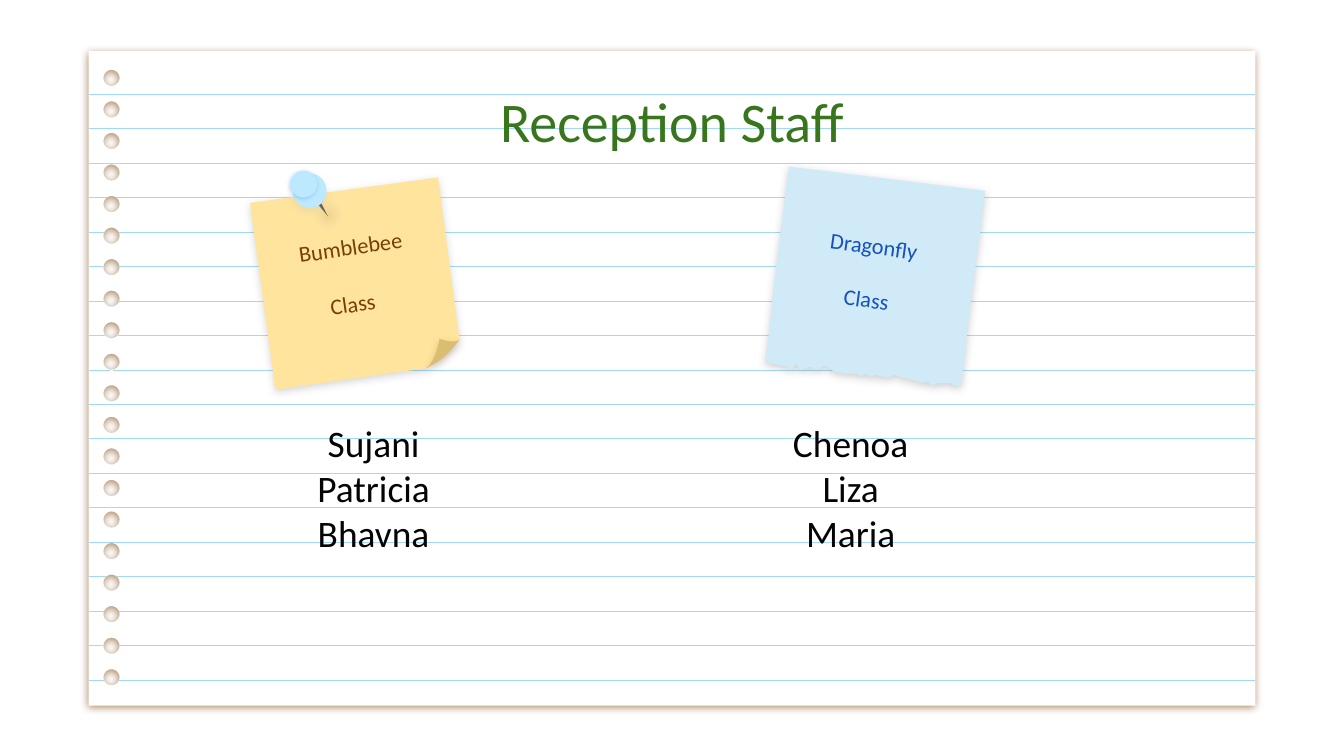
from dataclasses import dataclass
from math import cos, sin, tau

from lxml.etree import SubElement
from pptx import Presentation
from pptx.dml.color import RGBColor
from pptx.enum.shapes import MSO_CONNECTOR, MSO_SHAPE
from pptx.enum.text import MSO_ANCHOR, MSO_AUTO_SIZE, PP_ALIGN
from pptx.oxml import parse_xml
from pptx.oxml.ns import nsdecls, qn
from pptx.util import Inches, Pt

COLORS = {
    "paper": "FFFFFF", "rule": "A1DAF8", "brown": "783F04", "gray": "666666",
    "yellow": "FFE49E", "curl": "DABD71", "sky": "D1EAF7", "pin": "BDE9FF",
    "green": "38761D", "ink": "040404", "blue": "1552BD",
    "pin shade": "1155CC", "head shade": "3C78D8",
}

Point = tuple[float, float]


@dataclass
class Shadow:
    color: str
    opacity: int
    blur: float = 4.5
    distance: float = 1.5
    angle: int = 90


@dataclass
class Label:
    lines: list[str]
    frame: tuple[float, float, float, float]
    size: int
    color: str
    anchor: MSO_ANCHOR
    rotation: float = 0
    gap: float = 0
    tail_size: int = 0  # size of a closing space that makes the last line taller


LABELS = [
    Label(["Reception Staff"], (0.98, 0.54, 8.04, 0.69), 30, "green", MSO_ANCHOR.TOP),
    Label(["Bumblebee Class"], (1.98, 1.71, 1.32, 0.71), 12, "brown",
          MSO_ANCHOR.MIDDLE, 351.7, tail_size=28),
    Label(["Sujani", "Patricia", "Bhavna"], (1.61, 3.6, 2.34, 0.63), 20, "ink",
          MSO_ANCHOR.BOTTOM),
    Label(["Dragonfly", "Class"], (5.75, 1.71, 1.45, 0.63), 12, "blue",
          MSO_ANCHOR.MIDDLE, 8, gap=14.6),
    Label(["Chenoa", "Liza", "Maria"], (5.16, 3.6, 2.34, 0.63), 20, "ink",
          MSO_ANCHOR.BOTTOM),
]

PAPER_LEFT, PAPER_TOP, PAPER_RIGHT, PAPER_BOTTOM = 0.66, 0.38, 9.34, 5.25
HOLE_X, HOLE_RADIUS = 0.83, 0.06
FIRST_HOLE, LAST_HOLE, HOLE_COUNT = 0.58, 5.04, 20
FIRST_RULE, LAST_RULE, RULE_COUNT = 0.7, 5.06, 18

YELLOW_NOTE = [(3.26, 1.32), (1.86, 1.51), (2.05, 2.9), (3.17, 2.74), (3.42, 2.53)]
BLUE_NOTE = [(7.33, 1.42), (5.87, 1.24), (5.76, 2.11), (5.72, 2.49), (5.69, 2.7)]
TORN_EDGE = [
    (5.73, 2.7), (5.81, 2.72), (5.84, 2.72), (5.89, 2.75), (5.92, 2.71), (5.96, 2.75),
    (6.02, 2.73), (6.08, 2.75), (6.14, 2.72), (6.2, 2.76), (6.28, 2.78), (6.37, 2.78),
    (6.41, 2.8), (6.44, 2.78), (6.49, 2.81), (6.51, 2.79), (6.6, 2.81), (6.66, 2.79),
    (6.71, 2.81), (6.81, 2.83), (6.86, 2.85), (6.9, 2.84), (6.94, 2.87), (6.98, 2.85),
    (7.03, 2.85), (7.07, 2.85), (7.1, 2.87), (7.15, 2.87), (7.17, 2.72), (7.21, 2.36),
]
NEEDLE = [(2.35, 1.5), (2.44, 1.61), (2.38, 1.49)]


def rgb(name: str) -> RGBColor:
    return RGBColor.from_string(COLORS[name])


def spread(first: float, last: float, count: int) -> list[float]:
    return [first + (last - first) * i / (count - 1) for i in range(count)]


def circle(x: float, y: float, radius: float, steps: int = 24) -> list[Point]:
    return [(x + radius * cos(tau * i / steps), y + radius * sin(tau * i / steps))
            for i in range(steps)]


def curve(start: Point, pull: Point, push: Point, end: Point, steps: int = 8) -> list[Point]:
    """Points along a cubic Bezier curve."""
    points = []
    for t in spread(0, 1, steps + 1):
        weights = ((1 - t) ** 3, 3 * t * (1 - t) ** 2, 3 * t * t * (1 - t), t ** 3)
        points.append(tuple(sum(w * p[axis] for w, p in zip(weights, (start, pull, push, end)))
                            for axis in (0, 1)))
    return points


def style(shape, fill: str, shadow: Shadow | None = None) -> None:
    shape.fill.solid()
    shape.fill.fore_color.rgb = rgb(fill)
    shape.line.fill.background()
    shape.shadow.inherit = False
    if shadow:
        effects = shape.element.spPr.find(qn("a:effectLst"))
        outer = SubElement(effects, qn("a:outerShdw"), blurRad=str(Pt(shadow.blur)),
                           dist=str(Pt(shadow.distance)), dir=str(shadow.angle * 60000),
                           algn="bl", rotWithShape="0")
        color = SubElement(outer, qn("a:srgbClr"), val=COLORS[shadow.color])
        SubElement(color, qn("a:alpha"), val=str(shadow.opacity * 1000))


def draw_outline(page, contours: list[list[Point]], fill: str,
                 shadow: Shadow | None = None) -> None:
    contours = [[(Inches(x), Inches(y)) for x, y in points] for points in contours]
    builder = page.shapes.build_freeform(*contours[0][0])
    builder.add_line_segments(contours[0][1:], close=True)
    for points in contours[1:]:
        builder.move_to(*points[0])
        builder.add_line_segments(points[1:], close=True)
    style(builder.convert_to_shape(), fill, shadow)


def add_oval(page, left: float, top: float, width: float, height: float):
    return page.shapes.add_shape(MSO_SHAPE.OVAL, Inches(left), Inches(top),
                                 Inches(width), Inches(height))


def draw_rule(page, left: float, right: float, y: float) -> None:
    line = page.shapes.add_connector(MSO_CONNECTOR.STRAIGHT, Inches(left), Inches(y),
                                     Inches(right), Inches(y))
    line.line.color.rgb = rgb("rule")
    line.line.width = Pt(0.3)
    SubElement(line.element.spPr, qn("a:effectLst"))


def draw_paper(page) -> None:
    sheet = [(PAPER_LEFT, PAPER_TOP), (PAPER_LEFT, PAPER_BOTTOM),
             (PAPER_RIGHT, PAPER_BOTTOM), (PAPER_RIGHT, PAPER_TOP)]
    hole_rows = spread(FIRST_HOLE, LAST_HOLE, HOLE_COUNT)
    holes = [circle(HOLE_X, y, HOLE_RADIUS) for y in hole_rows]
    draw_outline(page, [sheet, *holes], "paper", Shadow("brown", 61))
    # Rules stop at the edge of any hole they cross
    for y in spread(FIRST_RULE, LAST_RULE, RULE_COUNT):
        offset = min(abs(y - hole) for hole in hole_rows)
        if offset < HOLE_RADIUS:
            half = (HOLE_RADIUS ** 2 - offset ** 2) ** 0.5
            draw_rule(page, PAPER_LEFT, HOLE_X - half, y)
            draw_rule(page, HOLE_X + half, PAPER_RIGHT, y)
        else:
            draw_rule(page, PAPER_LEFT, PAPER_RIGHT, y)


def draw_notes(page) -> None:
    draw_outline(page, [YELLOW_NOTE], "yellow", Shadow("gray", 26))
    curl = (curve((3.42, 2.53), (3.42, 2.53), (3.37, 2.56), (3.27, 2.52))
            + curve((3.27, 2.52), (3.27, 2.52), (3.25, 2.68), (3.17, 2.74))
            + curve((3.17, 2.74), (3.23, 2.71), (3.28, 2.68), (3.33, 2.63)))
    draw_outline(page, [curl], "curl", Shadow("brown", 26))
    draw_outline(page, [BLUE_NOTE + TORN_EDGE], "sky", Shadow("gray", 29))


def draw_pin(page) -> None:
    glow = add_oval(page, 2.31, 1.48, 0.26, 0.24)
    style(glow, "curl")
    stops = "".join(
        f'<a:gs pos="{pos}"><a:srgbClr val="{color}"><a:alpha val="{alpha}"/></a:srgbClr></a:gs>'
        for pos, color, alpha in ((0, "C9AE66", 31000), (60000, "C3BAA2", 0),
                                  (100000, "FFFFFF", 0)))
    gradient = parse_xml(
        f'<a:gradFill {nsdecls("a")}><a:gsLst>{stops}</a:gsLst><a:path path="circle">'
        '<a:fillToRect l="50000" t="50000" r="50000" b="50000"/></a:path></a:gradFill>')
    properties = glow.element.spPr
    properties.replace(properties.find(qn("a:solidFill")), gradient)
    draw_outline(page, [NEEDLE], "gray")
    style(add_oval(page, 2.18, 1.29, 0.25, 0.26), "pin", Shadow("pin shade", 8))
    style(add_oval(page, 2.16, 1.27, 0.2, 0.2), "pin", Shadow("head shade", 30, 2.2, 0.8, 108))


def fill_label(box, label: Label) -> None:
    box.left, box.top, box.width, box.height = map(Inches, label.frame)
    box.rotation = label.rotation
    frame = box.text_frame
    frame.word_wrap = True
    frame.auto_size = MSO_AUTO_SIZE.NONE
    frame.vertical_anchor = label.anchor
    frame.margin_left = frame.margin_right = frame.margin_top = frame.margin_bottom = Inches(0.1)
    frame.text = "\n".join(label.lines)
    for index, para in enumerate(frame.paragraphs):
        para.alignment = PP_ALIGN.CENTER
        para.space_before = Pt(label.gap if index else 0)
        properties = para._p.get_or_add_pPr()
        properties.set("marL", "0")
        properties.set("indent", "0")
        SubElement(properties, qn("a:buNone"))
        para.font.name = "Calibri"
        para.font.size = Pt(label.size)
        para.font.bold = False
        para.font.color.rgb = rgb(label.color)
    if label.tail_size:
        span = frame.paragraphs[-1].add_run()
        span.text = " "
        span.font.size = Pt(label.tail_size)


def main() -> None:
    deck = Presentation()
    deck.slide_width = Inches(10)
    deck.slide_height = deck.slide_width * 9 // 16
    page = deck.slides.add_slide(deck.slide_layouts.get_by_name("Comparison"))
    boxes = list(page.placeholders)
    draw_paper(page)
    draw_notes(page)
    # Text goes in front of the paper and the notes
    for box, label in zip(boxes, LABELS):
        fill_label(box, label)
        box.element.getparent().append(box.element)
    draw_pin(page)
    deck.save("out.pptx")


if __name__ == "__main__":
    main()
